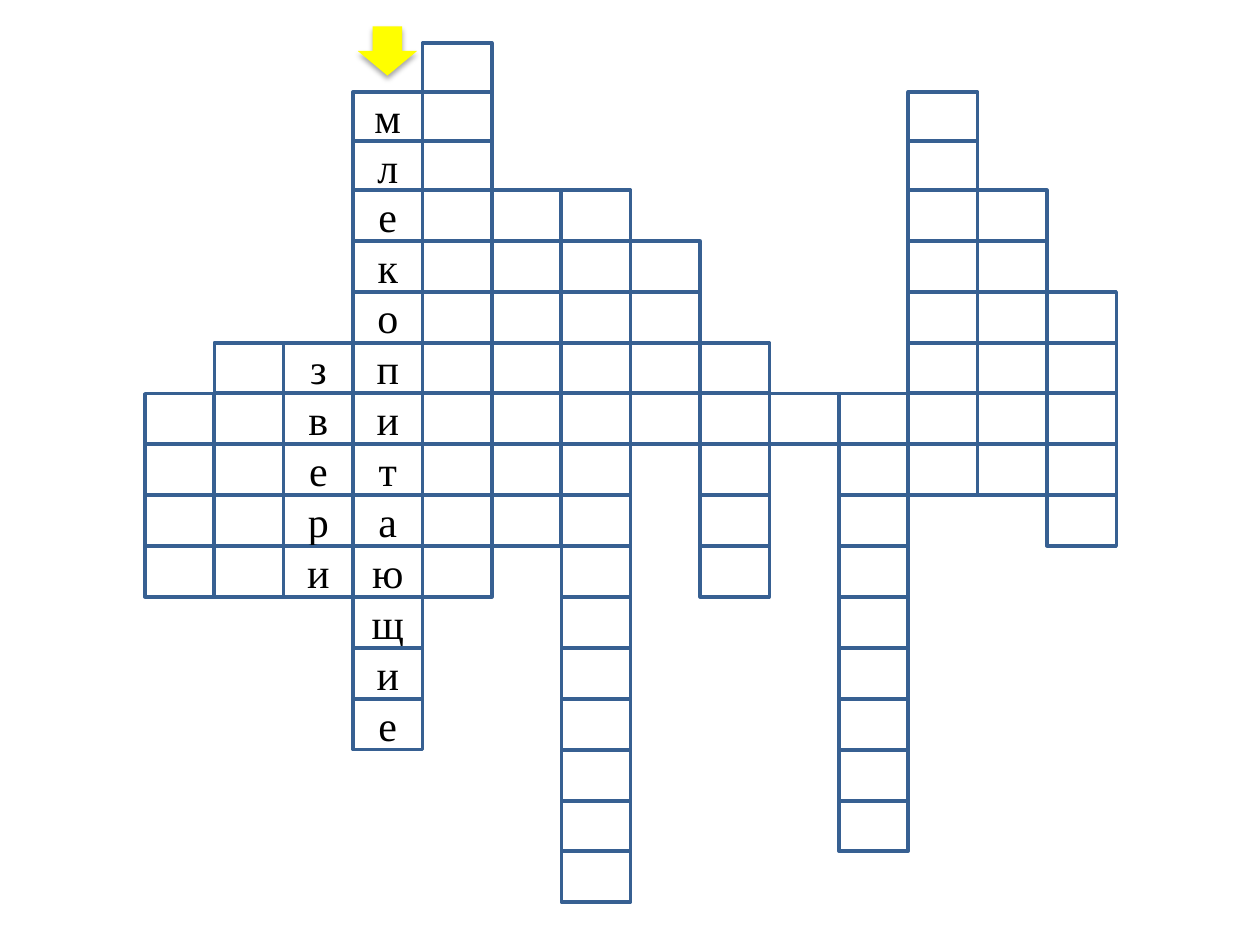
from lxml.etree import SubElement as Sub
from pptx import Presentation
from pptx.dml.color import RGBColor
from pptx.enum.shapes import MSO_SHAPE as Kind
from pptx.enum.text import MSO_ANCHOR as Anchor, PP_ALIGN as Align
from pptx.oxml.ns import qn
from pptx.util import Inches, Pt

WHITE = RGBColor(0xFF, 0xFF, 0xFF)
BLUE = RGBColor(0x37, 0x60, 0x92)
BLACK = RGBColor(0, 0, 0)
YELLOW = RGBColor(0xFF, 0xFF, 0)

LEFT, WIDE, HIGH = 1.15, 0.55, 0.4
STEP = 7.16 / 13
BEND = 3

BLANKS = [
    (0, 7, 4), (1, 6, 5), (4, 0, 11), (5, 3, 7), (6, 3, 14), (7, 4, 4),
    (8, 6, 5), (10, 7, 9), (11, 1, 8), (12, 3, 6), (13, 5, 5), (9, 7, 1),
]
WORDS = [(2, 6, "звери"), (3, 1, "млекопитающие")]


def row_top(row):
    pitch = 0.39 if row < BEND else 5.25 / 13
    return 1.51 + (row - BEND) * pitch


def put_text(shape, text, size=24, font="Times New Roman", color=BLACK):
    frame = shape.text_frame
    frame.word_wrap = True
    frame.vertical_anchor = Anchor.MIDDLE
    para = frame.paragraphs[0]
    para.alignment = Align.CENTER
    run = para.add_run()
    run.text = text
    run.font.size = Pt(size)
    run.font.name = font
    run.font.color.rgb = color


def add_form(slide, kind, box, fill):
    shape = slide.shapes.add_shape(kind, *[Inches(n) for n in box])
    shape.shadow.inherit = False
    shape.fill.solid()
    shape.fill.fore_color.rgb = fill
    return shape


def add_cell(slide, col, row, text=""):
    box = (LEFT + col * STEP, row_top(row), WIDE, HIGH)
    cell = add_form(slide, Kind.RECTANGLE, box, WHITE)
    cell.line.color.rgb = BLUE
    cell.line.width = Pt(2)
    if text:
        put_text(cell, text)


def add_column(slide, col, first, marks):
    for row, mark in enumerate(marks, first):
        add_cell(slide, col, row, mark)


def add_arrow(slide):
    arrow = add_form(slide, Kind.DOWN_ARROW, (2.84, 0.21, 0.47, 0.39), YELLOW)
    arrow.line.fill.background()
    effects = arrow.element.spPr.find(qn("a:effectLst"))
    shade = Sub(effects, qn("a:outerShdw"), blurRad=str(Pt(3.1)),
                dist=str(Pt(1.8)), dir="5400000", rotWithShape="0")
    tint = Sub(shade, qn("a:srgbClr"), val="000000")
    Sub(tint, qn("a:alpha"), val="35000")


def main():
    deck = Presentation()
    deck.slide_width = Inches(10)
    deck.slide_height = Inches(7.5)
    slide = deck.slides.add_slide(deck.slide_layouts[6])
    for col, first, count in BLANKS:
        add_column(slide, col, first, [""] * count)
    add_arrow(slide)
    for col, first, word in WORDS:
        add_column(slide, col, first, word)
    deck.save("out.pptx")


if __name__ == "__main__":
    main()
